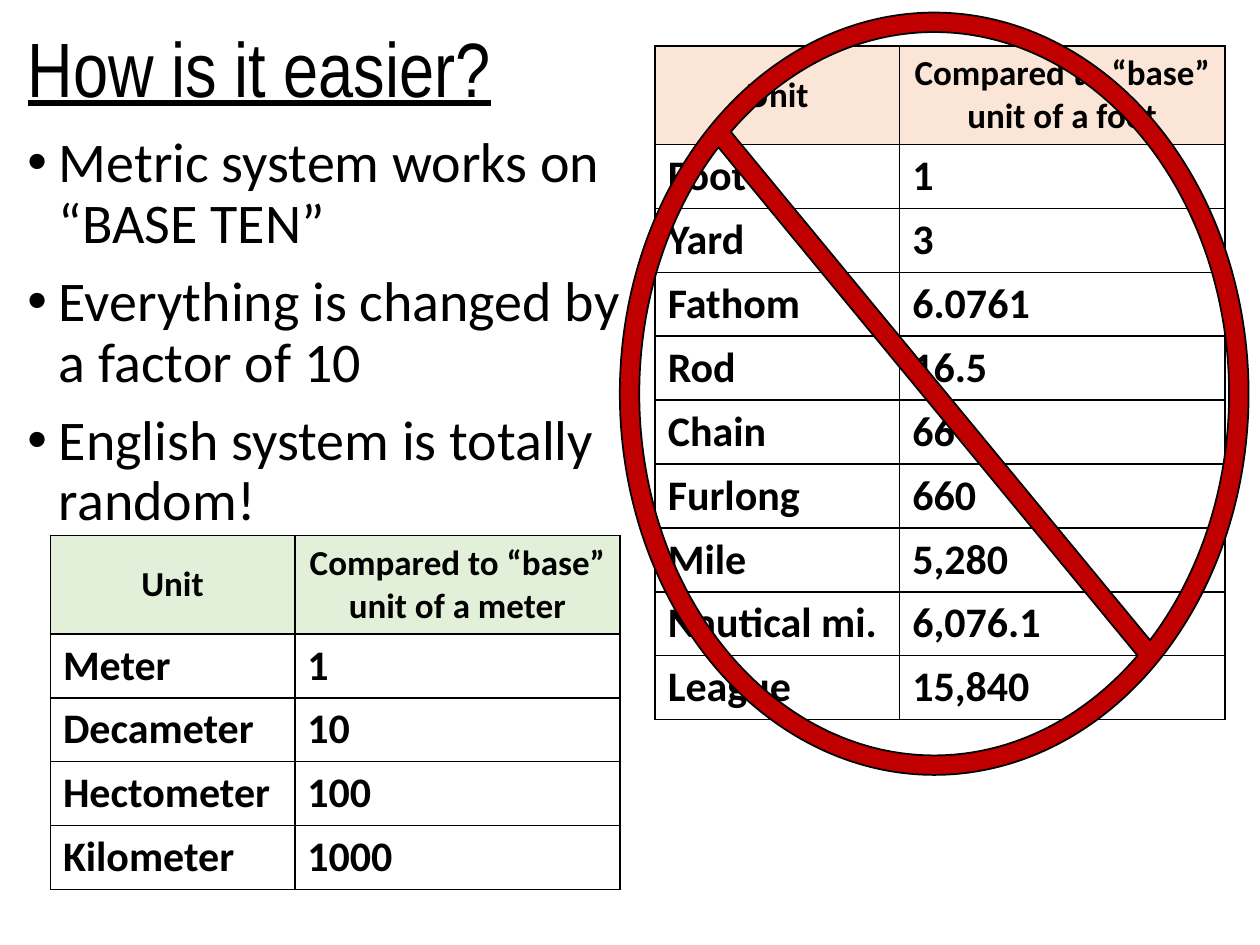
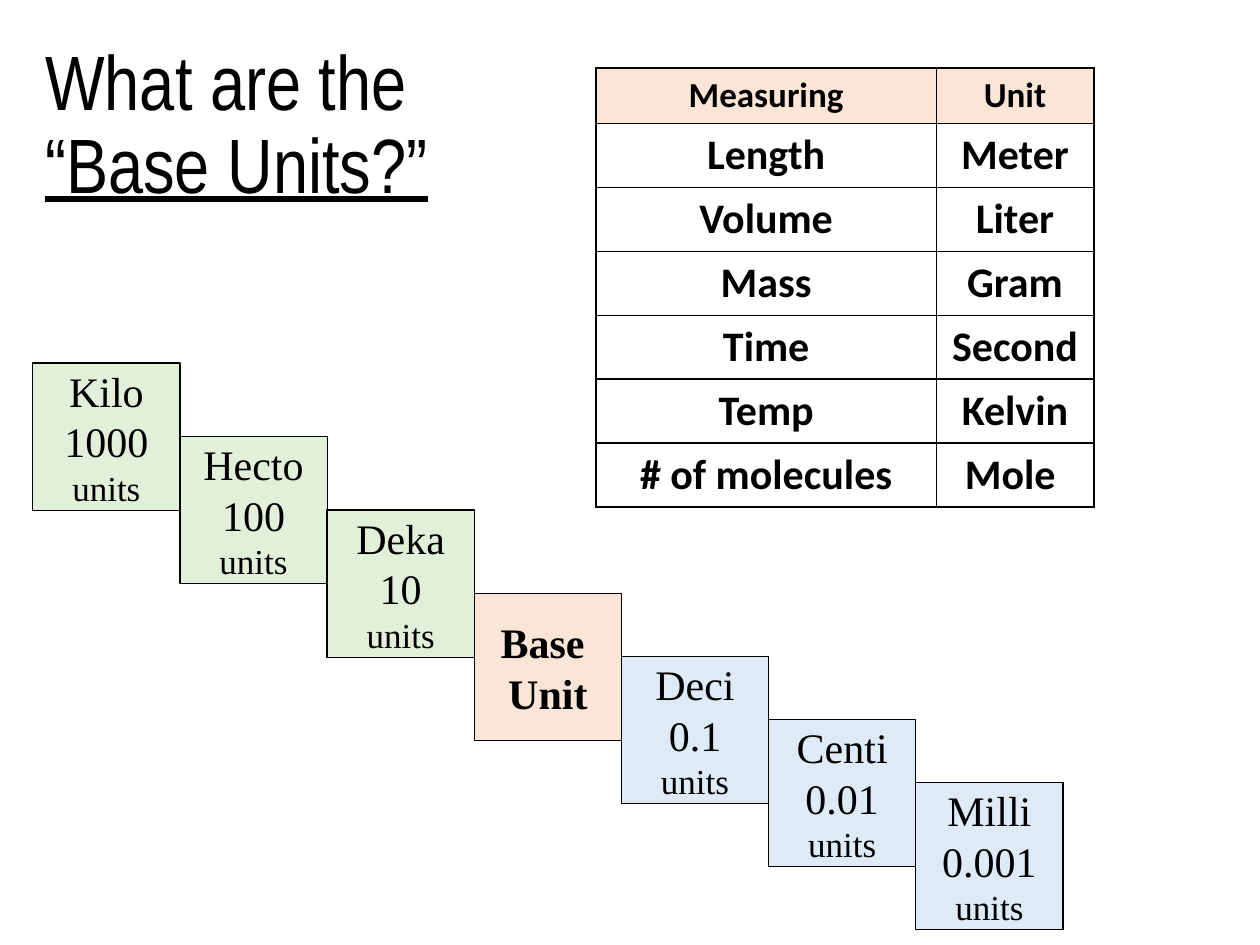
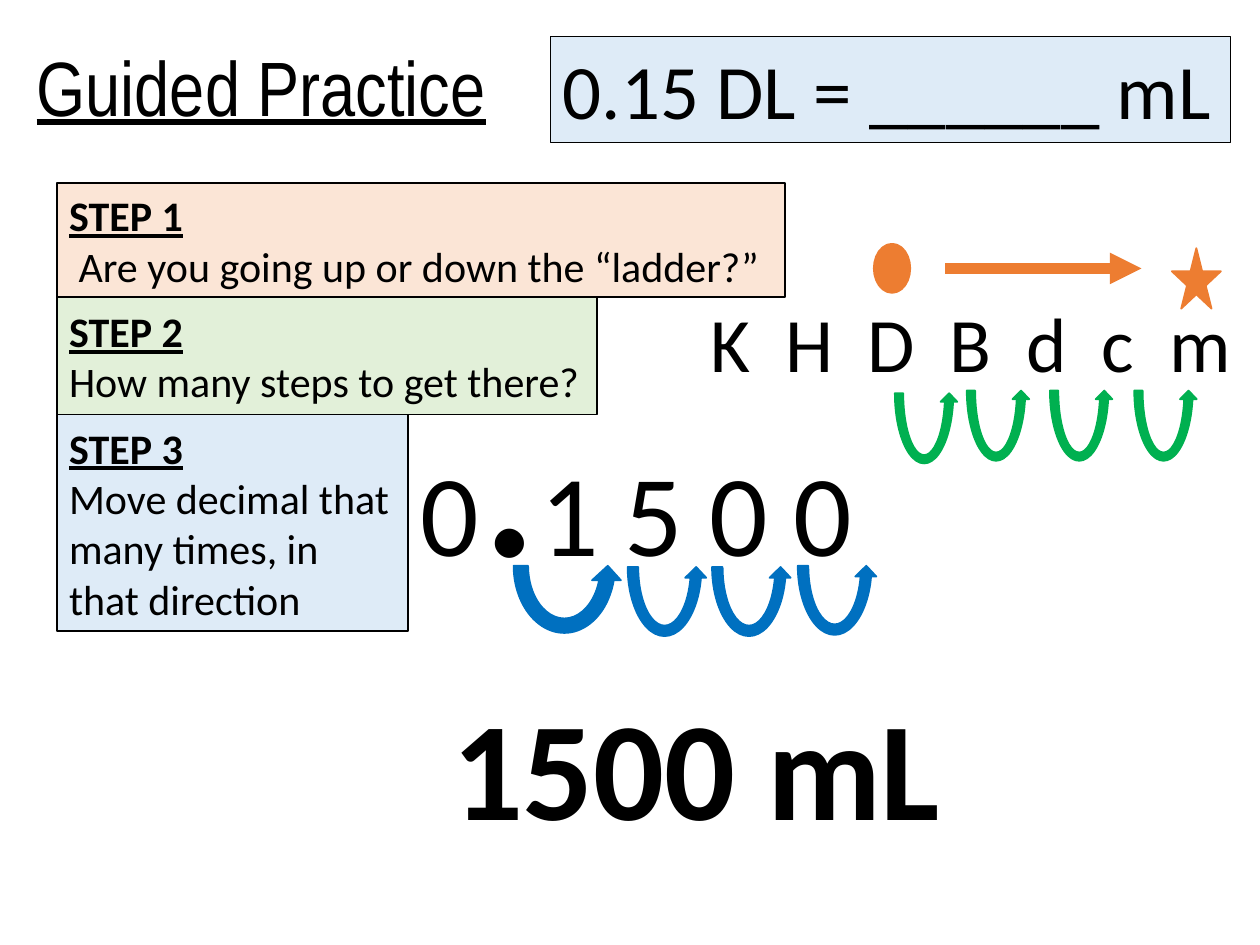
from lxml import etree
from pptx import Presentation
from pptx.dml.color import RGBColor
from pptx.enum.shapes import MSO_CONNECTOR, MSO_SHAPE as SHAPE
from pptx.enum.text import MSO_ANCHOR as ANCHOR, MSO_AUTO_SIZE as AUTO_SIZE, PP_ALIGN as ALIGN
from pptx.oxml import parse_xml
from pptx.oxml.ns import nsdecls, qn
from pptx.util import Pt

BLACK, RED, ORANGE = "000000", "C00000", "ED7D31"
ARROW_GREEN, ARROW_BLUE = "00B050", "0070C0"
PALE_GREEN, PALE_ORANGE, PALE_BLUE = "E2F0D9", "FBE5D6", "DEEBF7"
UNDERLINED = {"underline": True}
color = RGBColor.from_string


def write_text(text_frame, paragraphs, align=ALIGN.LEFT, **base_format):
    """Fill the frame; each paragraph is a list of (text, run format) pairs."""
    for index, runs in enumerate(paragraphs):
        paragraph = text_frame.paragraphs[0] if index == 0 else text_frame.add_paragraph()
        paragraph.alignment = align
        for text, run_format in runs:
            if text == "\n":
                paragraph.add_line_break()
                continue
            run = paragraph.add_run()
            run.text = text
            run.font.color.rgb = color(BLACK)
            for name, value in ({"name": "Calibri"} | base_format | run_format).items():
                setattr(run.font, name, value)


def add_box(slide, preset, place, fill, line=BLACK, line_width=1):
    shape = slide.shapes.add_shape(preset, *map(Pt, place))
    shape.shadow.inherit = False
    shape.fill.solid()
    shape.fill.fore_color.rgb = color(fill)
    shape.line.color.rgb = color(line)
    shape.line.width = Pt(line_width)
    return shape


presentation = Presentation()
presentation.slide_width, presentation.slide_height = Pt(720), Pt(540)

# Titles
titles = [
    (8.6, -10.8, [("How is it easier?", UNDERLINED)]),
    (18.7, 20.2, [("What are the ", {}), ("\n", {}), ("“Base Units?”", UNDERLINED)]),
    (13.7, 0, [("Guided Practice", UNDERLINED)]),
]
for left, top, runs in titles:
    slide = presentation.slides.add_slide(presentation.slide_layouts[5])
    title = slide.shapes.title
    title.left, title.top, title.width, title.height = map(Pt, (left, top, 620.6, 104.4))
    frame = title.text_frame
    frame.auto_size, frame.vertical_anchor = AUTO_SIZE.NONE, ANCHOR.MIDDLE
    write_text(frame, [runs], name="Arial Narrow", size=Pt(44))
    frame.paragraphs[0].line_spacing = 0.9
easier_slide, base_slide, practice_slide = presentation.slides

# Unit tables
metric_rows = [
    ("Unit", "Compared to “base” unit of a meter"),
    ("Meter", "1"), ("Decameter", "10"), ("Hectometer", "100"), ("Kilometer", "1000"),
]
english_rows = [
    ("Unit", "Compared to “base” unit of a foot"),
    ("Foot", "1"), ("Yard", "3"), ("Fathom", "6.0761"), ("Rod", "16.5"), ("Chain", "66"),
    ("Furlong", "660"), ("Mile", "5,280"), ("Nautical mi.", "6,076.1"), ("League", "15,840"),
]
base_unit_rows = [
    ("Measuring", "Unit"),
    ("Length", "Meter"), ("Volume", "Liter"), ("Mass", "Gram"), ("Time", "Second"),
    ("Temp", "Kelvin"), ("# of molecules", "Mole "),
]
tables = [
    (easier_slide, 28.8, 306, (139.7, 185.8), PALE_GREEN, ALIGN.LEFT, metric_rows),
    (easier_slide, 374.4, 26.4, (139.7, 185.8), PALE_ORANGE, ALIGN.LEFT, english_rows),
    (base_slide, 340.6, 38.9, (194.4, 90), PALE_ORANGE, ALIGN.CENTER, base_unit_rows),
]
for slide, left, top, widths, header_fill, body_align, rows in tables:
    table = slide.shapes.add_table(
        len(rows), 2, Pt(left), Pt(top), Pt(sum(widths)), Pt(29.5 * len(rows))).table
    table.horz_banding = False
    for column, width in zip(table.columns, widths):
        column.width = Pt(width)
    for row_index, row in enumerate(rows):
        for column_index, text in enumerate(row):
            cell = table.cell(row_index, column_index)
            is_header = row_index == 0
            write_text(cell.text_frame, [[(text, {})]], ALIGN.CENTER if is_header else body_align,
                       size=Pt(20 if is_header else 24), bold=True)
            cell_properties = cell._tc.get_or_add_tcPr()
            for side in ("lnL", "lnR", "lnT", "lnB"):
                cell_properties.append(parse_xml(
                    f'<a:{side} {nsdecls("a")} w="12700"><a:solidFill>'
                    f'<a:srgbClr val="{BLACK}"/></a:solidFill></a:{side}>'))
            if is_header:
                cell.vertical_anchor = ANCHOR.MIDDLE
                cell.fill.solid()
                cell.fill.fore_color.rgb = color(header_fill)
            else:
                cell.fill.background()

# Slide 1: bullets and the crossed-out English table
bullets = easier_slide.shapes.add_textbox(*map(Pt, (8.6, 73.4, 365.8, 342.7))).text_frame
bullets.word_wrap = True
write_text(bullets, [
    [("Metric system works on “BASE TEN”", {})],
    [("Everything is changed by a factor of 10", {})],
    [("English system is totally random!", {})],
], size=Pt(32))
for paragraph in bullets.paragraphs:
    paragraph.line_spacing, paragraph.space_before = 0.9, Pt(10)
    properties = paragraph._p.get_or_add_pPr()
    properties.set("marL", str(Pt(18)))
    properties.set("indent", str(-Pt(18)))
    etree.SubElement(properties, qn("a:buFont"), typeface="Arial")
    etree.SubElement(properties, qn("a:buChar"), char="•")
no_sign = add_box(easier_slide, SHAPE.NO_SYMBOL, (354.2, 7.2, 359.3, 435.6), RED)
no_sign.adjustments[0] = 0.031

# Slide 2: prefix ladder
prefixes = [
    ("Kilo", "1000", PALE_GREEN), ("Hecto", "100", PALE_GREEN), ("Deka", "10", PALE_GREEN),
    ("Base ", "Unit", PALE_ORANGE),
    ("Deci", "0.1", PALE_BLUE), ("Centi", "0.01", PALE_BLUE), ("Milli", "0.001", PALE_BLUE),
]
base_step = 3
for step, (prefix, amount, fill) in enumerate(prefixes):
    top = 207.4 + 42 * step if step < base_step else 339.1 + 36 * (step - base_step)
    box = add_box(base_slide, SHAPE.RECTANGLE, (18.7 + 84.1 * step, top, 84.2, 84.2), fill, line_width=0.75)
    box.text_frame.word_wrap = False
    lines = [[(prefix, {})], [(amount, {})]]
    if step != base_step:
        lines.append([("units", {"size": Pt(20)})])
    write_text(box.text_frame, lines, ALIGN.CENTER, name="Times New Roman", size=Pt(24), bold=step == base_step)

# Slide 3: question and steps
question = add_box(practice_slide, SHAPE.RECTANGLE, (314.6, 20.9, 388.8, 60.5), PALE_BLUE, line_width=0.75)
question.text_frame.vertical_anchor = ANCHOR.TOP
write_text(question.text_frame, [[("0.15 DL = ______ mL", {})]], size=Pt(44))

steps = [
    (104.4, 416.2, 65.5, PALE_ORANGE, " Are you going up or down the “ladder?”"),
    (169.9, 308.9, 67, PALE_GREEN, "How many steps to get there?"),
    (236.9, 200.9, 123.8, PALE_BLUE, "Move decimal that many times, in that direction"),
]
for number, (top, width, height, fill, instruction) in enumerate(steps, start=1):
    box = add_box(practice_slide, SHAPE.RECTANGLE, (32.4, top, width, height), fill)
    write_text(box.text_frame, [
        [(f"STEP {number}", {"bold": True, "underline": True})],
        [(instruction, {})],
    ], size=Pt(24))

# Slide 3: ladder letters, moving decimal and answer
large = {"size": Pt(66)}
labels = [
    ((396.7, 165.6, 316.1, 60.5), ALIGN.CENTER, [("K  H  D  B  d  c  m", {"size": Pt(44)})]),
    ((233.3, 176.4, 344.2, 174.2), ALIGN.LEFT, [("0", large), (".", {"size": Pt(138)}), ("1 5 0 0", large)]),
    ((251.3, 385.2, 429.8, 104.4), ALIGN.LEFT, [("1500 mL", {"size": Pt(80), "bold": True})]),
]
for place, align, runs in labels:
    frame = practice_slide.shapes.add_textbox(*map(Pt, place)).text_frame
    frame.word_wrap, frame.auto_size = True, AUTO_SIZE.SHAPE_TO_FIT_TEXT
    write_text(frame, [runs], align)

# Slide 3: start, direction and finish markers
add_box(practice_slide, SHAPE.OVAL, (501.1, 141.1, 17.3, 24.5), ORANGE, ORANGE, 4.5)
add_box(practice_slide, SHAPE.STAR_5_POINT, (669.6, 141.8, 28.1, 34.6), ORANGE, ORANGE)
direction = practice_slide.shapes.add_connector(
    MSO_CONNECTOR.STRAIGHT, Pt(540), Pt(153.4), Pt(652.3), Pt(153.4))
direction.line.color.rgb = color(ORANGE)
direction.line.width = Pt(6)
etree.SubElement(direction.line._get_or_add_ln(), qn("a:tailEnd"), type="triangle")
etree.SubElement(direction._element.spPr, qn("a:effectLst"))

# Slide 3: one hop per step
hops = [
    (509, 182.2, 38.2, ARROW_GREEN), (550.1, 180.7, 38.2, ARROW_GREEN),
    (597.6, 180.7, 38.2, ARROW_GREEN), (645.8, 180.7, 38.2, ARROW_GREEN),
    (289.4, 280.8, 66.2, ARROW_BLUE), (355.7, 281.5, 48.2, ARROW_BLUE),
    (403.9, 281.5, 48.2, ARROW_BLUE), (452.9, 280.8, 48.2, ARROW_BLUE),
]
for left, top, width, fill in hops:
    hop = add_box(practice_slide, SHAPE.CIRCULAR_ARROW, (left, top, width, 85), fill, fill)
    hop._element.spPr.xfrm.set("flipV", "1")

presentation.save("out.pptx")
